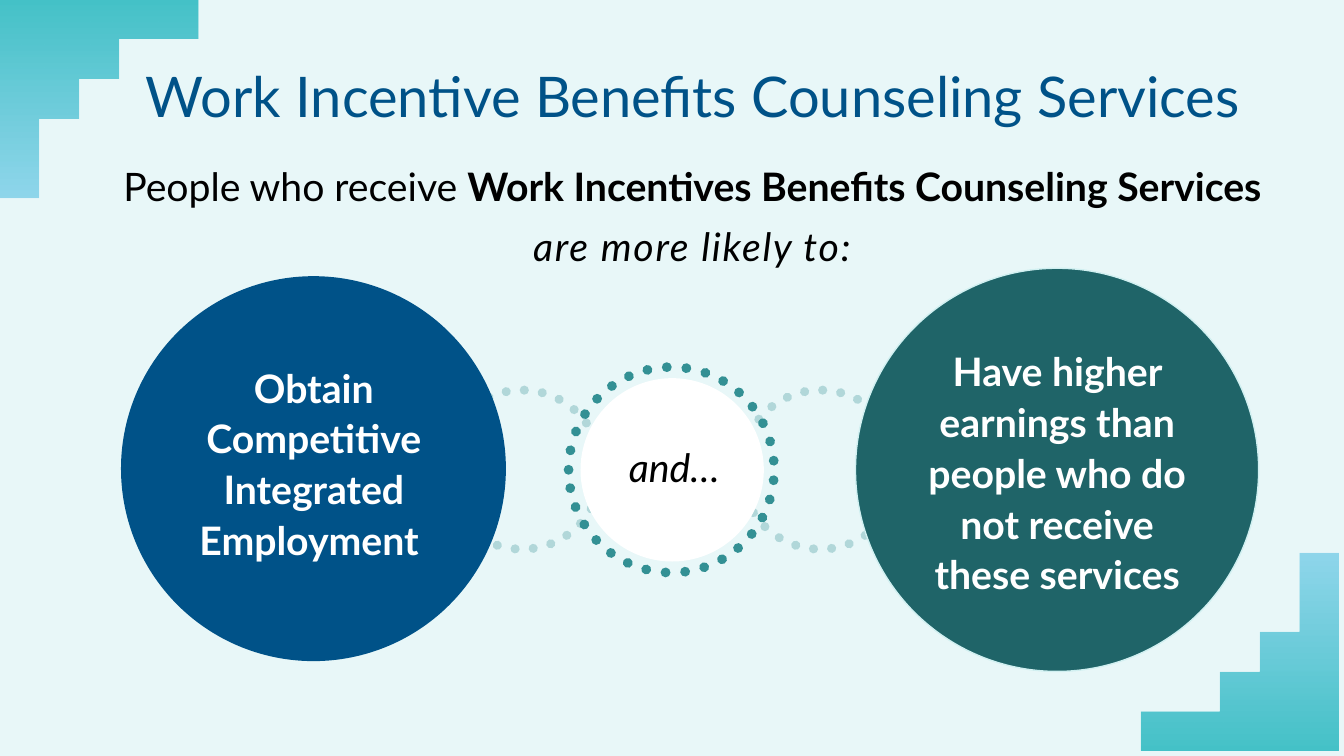
import pptx
import pptx.util
import pptx.dml.color
import pptx.enum.dml
import pptx.enum.shapes
import pptx.enum.text
import pptx.oxml
from lxml import etree

FONT = "Lato"
NAVY, TEAL, DARK_TEAL = "005288", "339094", "1F6468"
ALIGN = pptx.enum.text.PP_ALIGN


def rgb(value):
    return pptx.dml.color.RGBColor.from_string(value)


def cm(*lengths):
    return [pptx.util.Cm(length) for length in lengths]


def set_alpha(parent, percent):
    """Make every colour inside the given XML element partly transparent."""
    for colour in parent.iter(pptx.oxml.ns.qn("a:srgbClr")):
        etree.SubElement(colour, pptx.oxml.ns.qn("a:alpha"), val=str(percent * 1000))


def corner_outline(side, steps=60):
    """Points of a square corner whose inner edge is a cubic curve."""
    start, pull_top, pull_left, end = (7.9, 0), (3.68, 0), (0.23, 3.33), (0, 7.49)
    points = [(0, 0), (side, 0)]
    for step in range(steps + 1):
        t = step / steps
        weights = ((1 - t) ** 3, 3 * t * (1 - t) ** 2, 3 * t ** 2 * (1 - t), t ** 3)
        points.append(tuple(
            sum(w * p[axis] for w, p in zip(weights, (start, pull_top, pull_left, end)))
            for axis in (0, 1)))
    return points + [(0, side)]


class CounselingSlide:
    def __init__(self, deck):
        self.slide = deck.slides.add_slide(deck.slide_layouts[6])
        background = self.slide.background.fill
        background.solid()
        background.fore_color.rgb = rgb("E8F7F8")

    def circle(self, left, top, size, fill=None, line=None, width=1, dotted=False, alpha=None):
        disc = self.slide.shapes.add_shape(
            pptx.enum.shapes.MSO_SHAPE.OVAL, *cm(left, top, size, size))
        disc.shadow.inherit = False
        if fill:
            disc.fill.solid()
            disc.fill.fore_color.rgb = rgb(fill)
        else:
            disc.fill.background()
        if not line:
            disc.line.fill.background()
            return
        disc.line.color.rgb = rgb(line)
        disc.line.width = pptx.util.Pt(width)
        if dotted:
            disc.line.dash_style = pptx.enum.dml.MSO_LINE.ROUND_DOT
            outline = disc.line._get_or_add_ln()
            outline.set("cap", "rnd")
            if alpha:
                set_alpha(outline, alpha)

    def corner(self, left, top, side, rotation=0):
        points = corner_outline(side)
        builder = self.slide.shapes.build_freeform(0, 0, scale=pptx.util.Cm(1))
        builder.add_line_segments(points[1:], close=True)
        sweep = builder.convert_to_shape(*cm(left, top))
        sweep.rotation = rotation
        sweep.shadow.inherit = False
        sweep.line.fill.background()
        sweep.fill.gradient()
        sweep.fill.gradient_angle = 270
        first, last = sweep.fill.gradient_stops
        for stop, position, colour in ((first, 0, "45C2C8"), (last, 1, "B3DFFF")):
            stop.position = position
            stop.color.rgb = rgb(colour)
        set_alpha(last._gs, 90)

    def text(self, box, *runs, size=28, color="000000", align=ALIGN.CENTER,
             spacing=1.08, bold=False, italic=False, tracking=None):
        """Add a bottom-anchored text box; a run is a string or a (string, bold) pair."""
        frame = self.slide.shapes.add_textbox(*cm(*box)).text_frame
        frame.word_wrap = True
        frame.vertical_anchor = pptx.enum.text.MSO_ANCHOR.BOTTOM
        paragraph = frame.paragraphs[0]
        paragraph.alignment = align
        paragraph.line_spacing = spacing
        for item in runs:
            words, heavy = (item, bold) if isinstance(item, str) else item
            run = paragraph.add_run()
            run.text = words
            run.font.name = FONT
            run.font.size = pptx.util.Pt(size)
            run.font.color.rgb = rgb(color)
            run.font.bold = heavy
            run.font.italic = italic
            if tracking:
                run.font._element.set("spc", str(round(tracking * 100)))


def main():
    deck = pptx.Presentation()
    deck.slide_width, deck.slide_height = cm(33.87, 19.05)
    page = CounselingSlide(deck)

    for link_left in (11.15, 18.67):
        page.circle(link_left, 9.83, 4.01, line=TEAL, width=6.5, dotted=True, alpha=30)
    page.circle(14.63, 9.53, 4.62, fill="FFFFFF")

    page.text((3.12, 1.19, 28.68, 2.18), "Work Incentive Benefits Counseling Services",
              size=40, color=NAVY, spacing=1.05)

    side = 8.13
    page.corner(0, 0, side)
    page.corner(33.87 - side, 19.05 - side, side, rotation=180)

    page.circle(3.05, 6.96, 9.7, fill=NAVY)
    page.text((2.51, 3.91, 29.87, 1.5), "People who receive ",
              ("Work Incentives Benefits Counseling Services", True))
    page.text((2.51, 5.46, 29.87, 1.45), "are more likely to:", italic=True, tracking=1.3)
    page.text((4.47, 9.19, 6.88, 5.13), "Obtain Competitive Integrated Employment ",
              color="FFFFFF", bold=True)
    page.text((15.6, 11.18, 2.79, 1.3), "and…", align=ALIGN.LEFT, italic=True)
    page.circle(21.56, 6.76, 10.16, fill=DARK_TEAL, line="D1F0F1")
    page.text((22.78, 8.26, 7.72, 6.93),
              "Have higher earnings than people who do not receive these services",
              color="FFFFFF", bold=True)
    page.circle(14.33, 9.25, 5.18, line=TEAL, width=7, dotted=True)

    deck.save("out.pptx")


if __name__ == "__main__":
    main()
